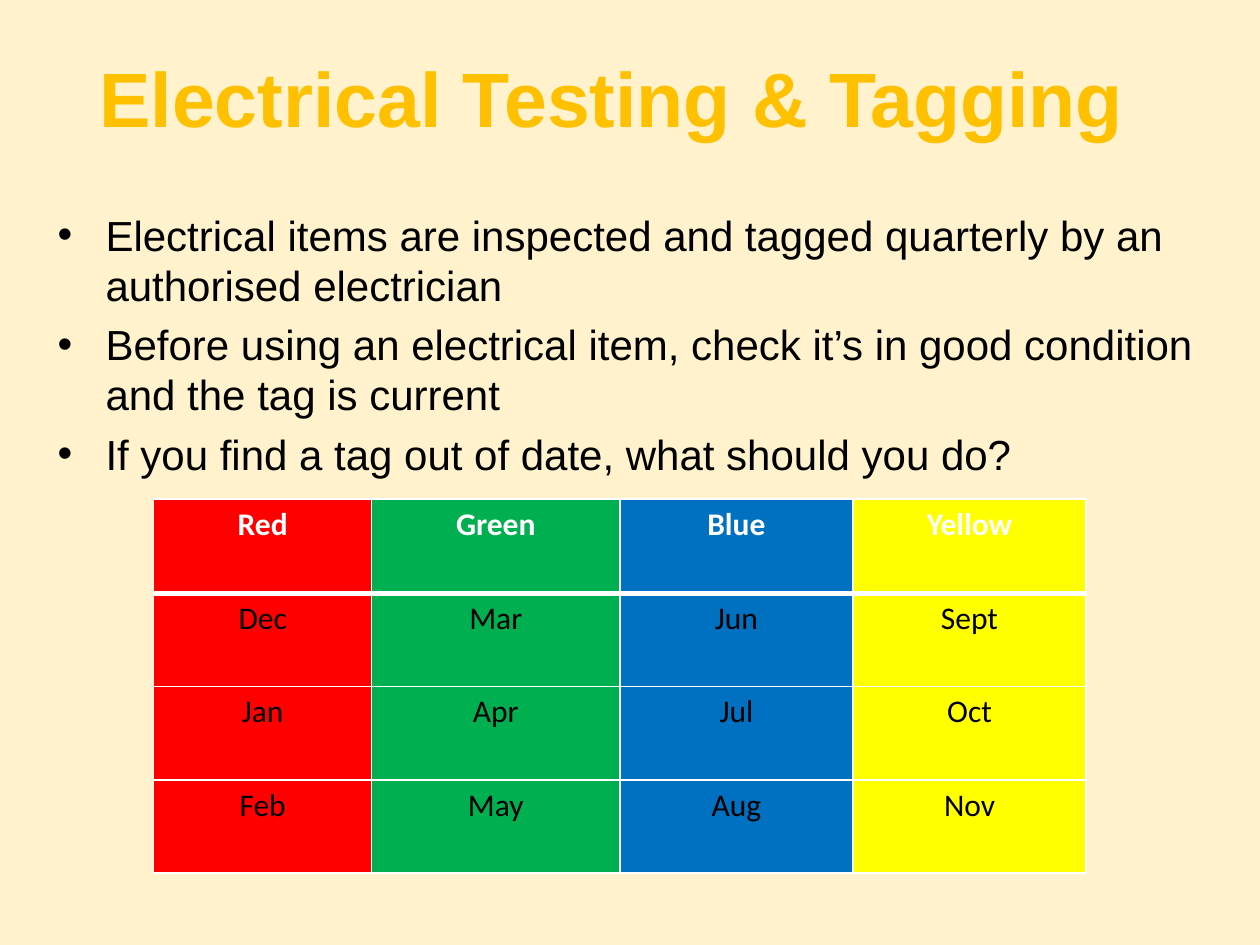
from lxml import etree
from pptx import Presentation
from pptx.dml.color import RGBColor
from pptx.enum import text as t
from pptx.oxml.ns import qn
from pptx.util import Inches, Pt

HUES = {"cream": "FFF2CC", "gold": "FFC000", "black": "000000", "white": "FFFFFF",
        "Red": "FF0000", "Green": "00B050", "Blue": "0070C0", "Yellow": "FFFF00"}
TITLE = "Electrical Testing & Tagging"
POINTS = [
    "Electrical items are inspected and tagged quarterly by an authorised electrician",
    "Before using an electrical item, check it’s in good condition and the tag is current",
    "If you find a tag out of date, what should you do?",
]
TAGS = [
    ("Red", "Green", "Blue", "Yellow"),
    ("Dec", "Mar", "Jun", "Sept"),
    ("Jan", "Apr", "Jul", "Oct"),
    ("Feb", "May", "Aug", "Nov"),
]
WIDTHS = [1.73, 1.97, 1.85, 1.85]
HEIGHTS = [0.75, 0.74, 0.74, 0.74]


def color(name):
    return RGBColor.from_string(HUES[name])


def write(para, words, size, face, hue, bold=False):
    run = para.add_run()
    run.text = words
    font = run.font
    font.size, font.name, font.bold = Pt(size), face, bold
    font.color.rgb = color(hue)


def place(shape, left, top, width, height):
    shape.left, shape.top = Inches(left), Inches(top)
    shape.width, shape.height = Inches(width), Inches(height)


def bullet(para, indent):
    props = para._p.get_or_add_pPr()
    props.set("marL", str(Inches(indent)))
    props.set("indent", str(-Inches(indent)))
    etree.SubElement(props, qn("a:buFont")).set("typeface", "Arial")
    etree.SubElement(props, qn("a:buChar")).set("char", "•")


def border(cell, sides):
    """Draw white cell edges; sides maps L, R, T, B to points, in that order."""
    props = cell._tc.get_or_add_tcPr()
    for side, width in sides.items():
        line = etree.SubElement(props, qn(f"a:ln{side}"), w=str(Pt(width)))
        fill = etree.SubElement(line, qn("a:solidFill"))
        etree.SubElement(fill, qn("a:srgbClr"), val=HUES["white"])


def add_title(slide):
    title = slide.shapes.title
    place(title, 0.69, 0.4, 8.62, 0.83)
    frame = title.text_frame
    frame.auto_size = t.MSO_AUTO_SIZE.NONE
    frame.vertical_anchor = t.MSO_ANCHOR.MIDDLE
    para = frame.paragraphs[0]
    para.alignment = t.PP_ALIGN.LEFT
    para.line_spacing = 0.9
    write(para, TITLE, 44, "Arial", "gold", True)


def add_points(slide):
    box = slide.shapes.add_textbox(Inches(0.36), Inches(1.61), Inches(9.53), Inches(2.35))
    frame = box.text_frame
    frame.word_wrap = True
    for i, words in enumerate(POINTS):
        para = frame.add_paragraph() if i else frame.paragraphs[0]
        bullet(para, 0.38)
        if i:
            para.space_before = Pt(5)
        write(para, words, 24, "Arial", "black")


def add_tags(slide):
    table = slide.shapes.add_table(
        len(TAGS), len(WIDTHS), Inches(1.22), Inches(3.96),
        Inches(sum(WIDTHS)), Inches(sum(HEIGHTS))).table
    for col, width in zip(table.columns, WIDTHS):
        col.width = Inches(width)
    for r, (row, height) in enumerate(zip(TAGS, HEIGHTS)):
        table.rows[r].height = Inches(height)
        head = r == 0
        for c, words in enumerate(row):
            cell = table.cell(r, c)
            border(cell, {"L": 1, "R": 1, "T": 3 if r == 1 else 1, "B": 3 if head else 1})
            cell.fill.solid()
            cell.fill.fore_color.rgb = color(TAGS[0][c])
            para = cell.text_frame.paragraphs[0]
            para.alignment = t.PP_ALIGN.CENTER
            write(para, words, 18, "Calibri", "white" if head else "black", head)


def main():
    deck = Presentation()
    deck.slide_width, deck.slide_height = Inches(10), Inches(7.5)
    slide = deck.slides.add_slide(deck.slide_layouts[5])
    slide.background.fill.solid()
    slide.background.fill.fore_color.rgb = color("cream")
    add_title(slide)
    add_points(slide)
    add_tags(slide)
    deck.save("out.pptx")


if __name__ == "__main__":
    main()
